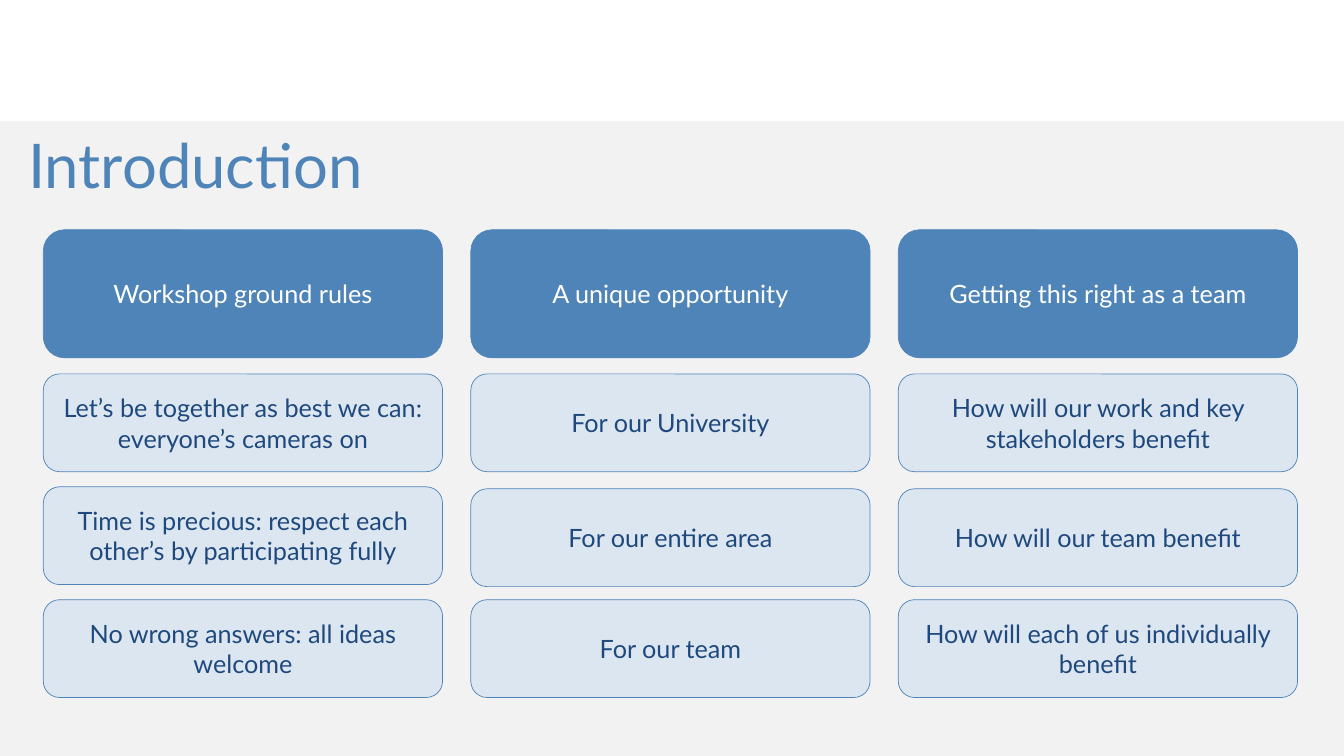
"""Build the workshop introduction slide with three columns of cards."""
import pptx
import pptx.dml.color
import pptx.enum.shapes
import pptx.enum.text
import pptx.util

TITLE = "Introduction"
COLUMNS = [
    ("Workshop ground rules", [
        "Let’s be together as best we can: everyone’s cameras on",
        "Time is precious: respect each other’s by participating fully",
        "No wrong answers: all ideas welcome",
    ]),
    ("A unique opportunity", [
        "For our University",
        "For our entire area",
        "For our team",
    ]),
    ("Getting this right as a team", [
        "How will our work and key stakeholders benefit",
        "How will our team benefit",
        "How will each of us individually benefit",
    ]),
]
COLORS = {"panel": "F2F2F2", "blue": "4E84B7", "pale": "DCE6F1",
          "navy": "1F497D", "white": "FFFFFF"}
FONT = "Lato"
SLIDE_WIDTH, SLIDE_HEIGHT = 13.33, 7.5
PANEL_TOP = 0.16 * SLIDE_HEIGHT
GRID_LEFT, COLUMN_STEP, CARD_WIDTH = 0.43, 4.24, 3.96
HEADER_TOP, HEADER_HEIGHT = 2.28, 1.27
CARD_TOP, ROW_STEP, CARD_HEIGHT = 3.71, 1.12, 0.97
MIDDLE_ROW_DROP = (0, 0.02, 0.02)

Inches = pptx.util.Inches
SHAPES = pptx.enum.shapes.MSO_SHAPE


def color(name):
    return pptx.dml.color.RGBColor.from_string(COLORS[name])


def set_font(paragraph, size, name):
    paragraph.font.name = FONT
    paragraph.font.size = pptx.util.Pt(size)
    paragraph.font.color.rgb = color(name)


def add_block(slide, kind, left, top, width, height, fill):
    shape = slide.shapes.add_shape(
        kind, Inches(left), Inches(top), Inches(width), Inches(height))
    shape.shadow.inherit = False
    shape.fill.solid()
    shape.fill.fore_color.rgb = color(fill)
    return shape


def add_card(slide, text, left, top, height, fill, text_color):
    card = add_block(slide, SHAPES.ROUNDED_RECTANGLE, left, top, CARD_WIDTH, height, fill)
    card.line.color.rgb = color("blue")
    card.line.width = pptx.util.Pt(0.5)
    frame = card.text_frame
    frame.word_wrap = True
    frame.vertical_anchor = pptx.enum.text.MSO_ANCHOR.MIDDLE
    paragraph = frame.paragraphs[0]
    paragraph.text = text
    paragraph.alignment = pptx.enum.text.PP_ALIGN.CENTER
    set_font(paragraph, 18, text_color)


def add_title(slide):
    box = slide.shapes.add_textbox(
        Inches(0.18), Inches(1.21), Inches(SLIDE_WIDTH - 0.18), Inches(0.84))
    box.text_frame.word_wrap = True
    paragraph = box.text_frame.paragraphs[0]
    paragraph.text = TITLE
    set_font(paragraph, 44, "blue")


def main():
    presentation = pptx.Presentation()
    presentation.slide_width = Inches(SLIDE_WIDTH)
    presentation.slide_height = Inches(SLIDE_HEIGHT)
    slide = presentation.slides.add_slide(presentation.slide_layouts[6])
    panel = add_block(slide, SHAPES.RECTANGLE, 0, PANEL_TOP, SLIDE_WIDTH,
                      SLIDE_HEIGHT - PANEL_TOP, "panel")
    panel.line.fill.background()
    add_title(slide)
    for column, (header, items) in enumerate(COLUMNS):
        left = GRID_LEFT + column * COLUMN_STEP
        add_card(slide, header, left, HEADER_TOP, HEADER_HEIGHT, "blue", "white")
        for row, item in enumerate(items):
            drop = MIDDLE_ROW_DROP[column] if row == 1 else 0
            add_card(slide, item, left, CARD_TOP + row * ROW_STEP + drop,
                     CARD_HEIGHT, "pale", "navy")
    presentation.save("out.pptx")


if __name__ == "__main__":
    main()
